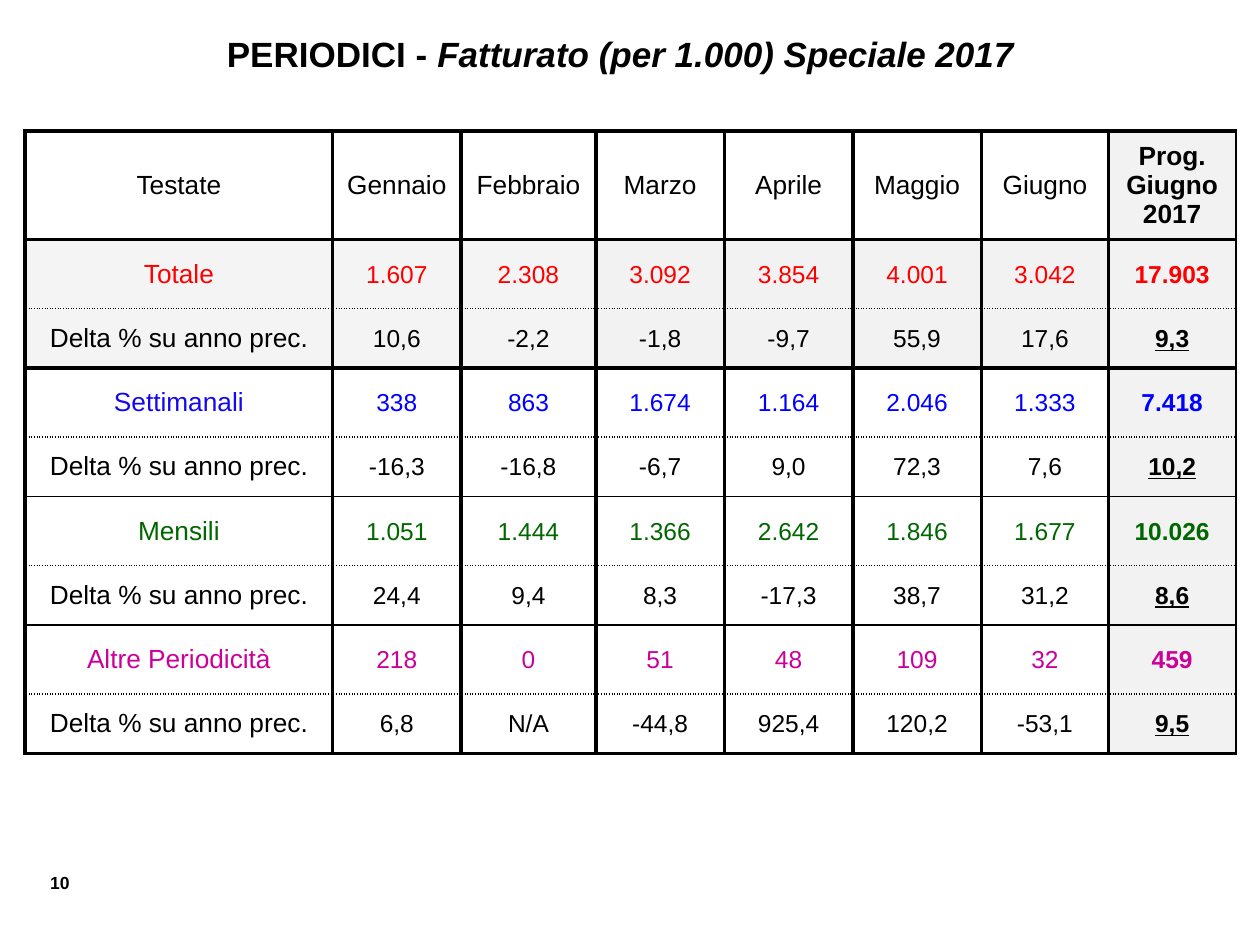
from lxml import etree
from pptx import Presentation
from pptx import util as u
from pptx.dml.color import RGBColor
from pptx.enum import text
from pptx.oxml import ns

BLACK = RGBColor(0x00, 0x00, 0x00)
RED = RGBColor(0xFF, 0x00, 0x00)
NAVY = RGBColor(0x14, 0x09, 0xED)
BLUE = RGBColor(0x00, 0x00, 0xFF)
GREEN = RGBColor(0x00, 0x66, 0x00)
MAGENTA = RGBColor(0xCC, 0x00, 0x99)
GREY = RGBColor(0xF2, 0xF2, 0xF2)

THICK, THIN, DOTTED = (2.25, "solid"), (1, "solid"), (1, "sysDot")
DELTA = "Delta % su anno prec."

ROWS = [
    ["Testate", "Gennaio", "Febbraio", "Marzo", "Aprile", "Maggio", "Giugno", "Prog.\nGiugno 2017"],
    ["Totale", "1.607", "2.308", "3.092", "3.854", "4.001", "3.042", "17.903"],
    [DELTA, "10,6", "-2,2", "-1,8", "-9,7", "55,9", "17,6", "9,3"],
    ["Settimanali", "338", "863", "1.674", "1.164", "2.046", "1.333", "7.418"],
    [DELTA, "-16,3", "-16,8", "-6,7", "9,0", "72,3", "7,6", "10,2"],
    ["Mensili", "1.051", "1.444", "1.366", "2.642", "1.846", "1.677", "10.026"],
    [DELTA, "24,4", "9,4", "8,3", "-17,3", "38,7", "31,2", "8,6"],
    ["Altre Periodicità", "218", "0", "51", "48", "109", "32", "459"],
    [DELTA, "6,8", "N/A", "-44,8", "925,4", "120,2", "-53,1", "9,5"],
]
ROW_COLORS = {1: RED, 3: BLUE, 5: GREEN, 7: MAGENTA}
COL_WIDTHS = [2.44, 1.02, 1.07, 1.02, 1.02, 1.02, 1.01, 1.01]
ROW_HEIGHTS = [0.86] + [0.55, 0.47] * 4
H_LINES = [THICK, THICK, DOTTED, THICK, DOTTED, THIN, DOTTED, THIN, DOTTED, THICK]
V_LINES = [THICK] * 8 + [THIN]


def add_run(p, words, size, color=BLACK, bold=False, italic=False, underline=False):
    r = p.add_run()
    r.text = words
    r.font.name = "Arial"
    r.font.size = u.Pt(size)
    r.font.color.rgb = color
    r.font.bold = bold
    r.font.italic = italic
    r.font.underline = underline


def add_border(cell, side, line):
    width, dash = line
    ln = etree.SubElement(cell._tc.get_or_add_tcPr(), ns.qn("a:" + side), w=str(u.Pt(width)))
    fill = etree.SubElement(ln, ns.qn("a:solidFill"))
    etree.SubElement(fill, ns.qn("a:srgbClr"), val=str(BLACK))
    etree.SubElement(ln, ns.qn("a:prstDash"), val=dash)


prs = Presentation()
prs.slide_width = u.Inches(10)
prs.slide_height = u.Inches(7.5)
s = prs.slides.add_slide(prs.slide_layouts[6])

number = s.shapes.add_textbox(u.Inches(0.19), u.Inches(6.87), u.Inches(0.46), u.Inches(0.27))
tf = number.text_frame
tf.word_wrap = True
p = tf.paragraphs[0]
p.alignment = text.PP_ALIGN.RIGHT
add_run(p, "10", 10, bold=True)

table = s.shapes.add_table(len(ROWS), len(COL_WIDTHS), u.Inches(0.2), u.Inches(1.04),
                           u.Inches(9.61), u.Inches(4.96)).table
table.first_row = False
table.horz_banding = False
for col, width in zip(table.columns, COL_WIDTHS):
    col.width = u.Inches(width)
for row, height in zip(table.rows, ROW_HEIGHTS):
    row.height = u.Inches(height)

for i, row in enumerate(ROWS):
    for j, words in enumerate(row):
        cell = table.cell(i, j)
        label = i == 0 or j == 0
        last = j == len(row) - 1
        cell.vertical_anchor = text.MSO_ANCHOR.MIDDLE
        cell.margin_left = cell.margin_right = u.Inches(0.1 if label else 0.01)
        cell.margin_top = u.Inches(0.05 if label else 0.01)
        cell.margin_bottom = u.Inches(0.05 if label else 0)

        add_border(cell, "lnL", V_LINES[j])
        add_border(cell, "lnR", V_LINES[j + 1])
        add_border(cell, "lnT", H_LINES[i])
        add_border(cell, "lnB", H_LINES[i + 1])

        if last or i in (1, 2):
            cell.fill.solid()
            cell.fill.fore_color.rgb = GREY
            if j < 3:
                clr = cell._tc.tcPr.find(ns.qn("a:solidFill")).find(ns.qn("a:srgbClr"))
                etree.SubElement(clr, ns.qn("a:alpha"), val="80000")
        else:
            cell.fill.background()

        color = NAVY if (i, j) == (3, 0) else ROW_COLORS.get(i, BLACK)
        p = cell.text_frame.paragraphs[0]
        p.alignment = text.PP_ALIGN.CENTER
        for k, part in enumerate(words.split("\n")):
            if k:
                p.add_line_break()
            add_run(p, part, 15 if label else 14, color, bold=last,
                    underline=last and row[0] == DELTA)

title = s.shapes.add_textbox(u.Inches(0.2), u.Inches(0.21), u.Inches(9.45), u.Inches(0.44))
tf = title.text_frame
tf.word_wrap = True
p = tf.paragraphs[0]
p.alignment = text.PP_ALIGN.CENTER
add_run(p, "PERIODICI - ", 20, bold=True)
add_run(p, "Fatturato (per 1.000) Speciale 2017", 20, bold=True, italic=True)

prs.save("out.pptx")
